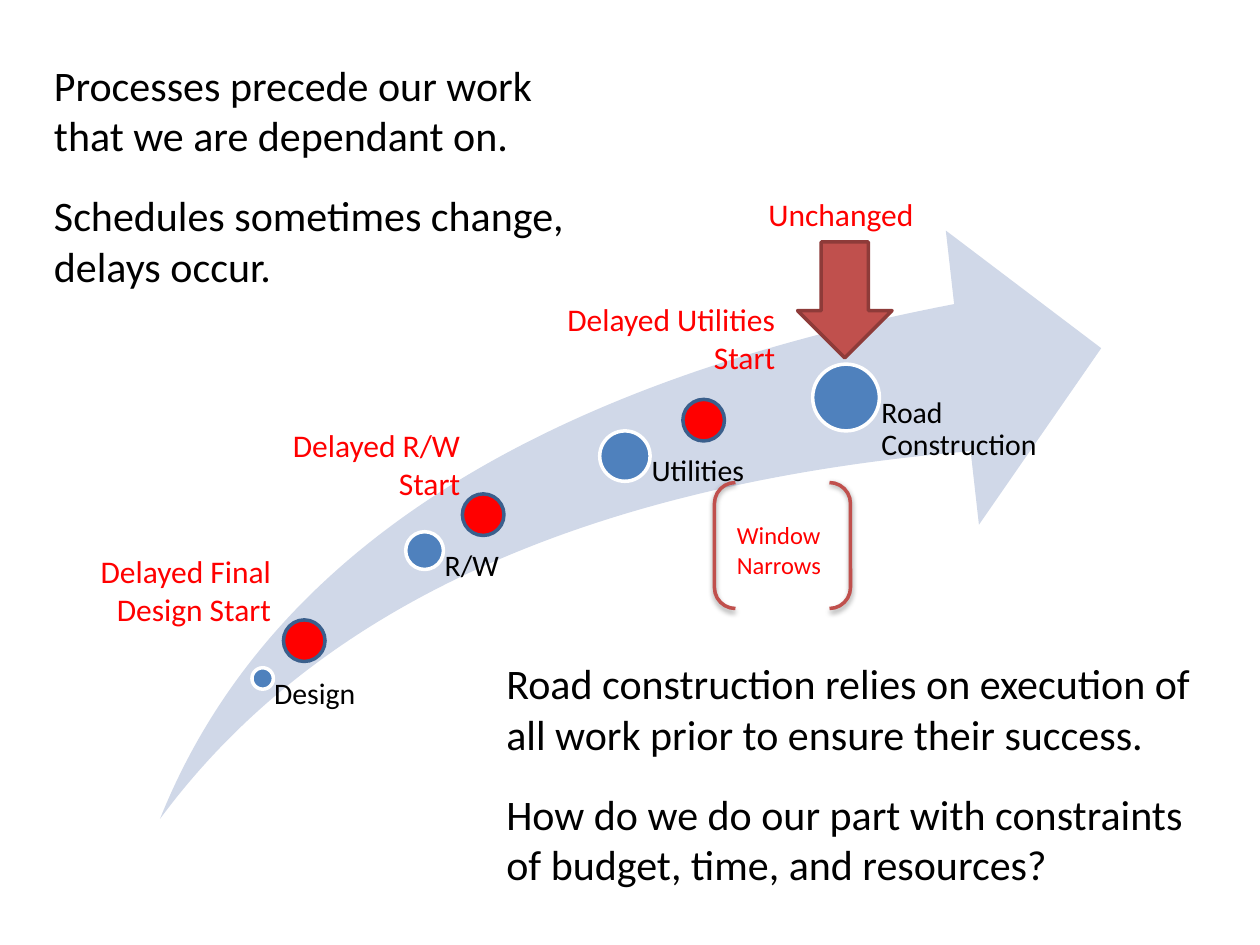
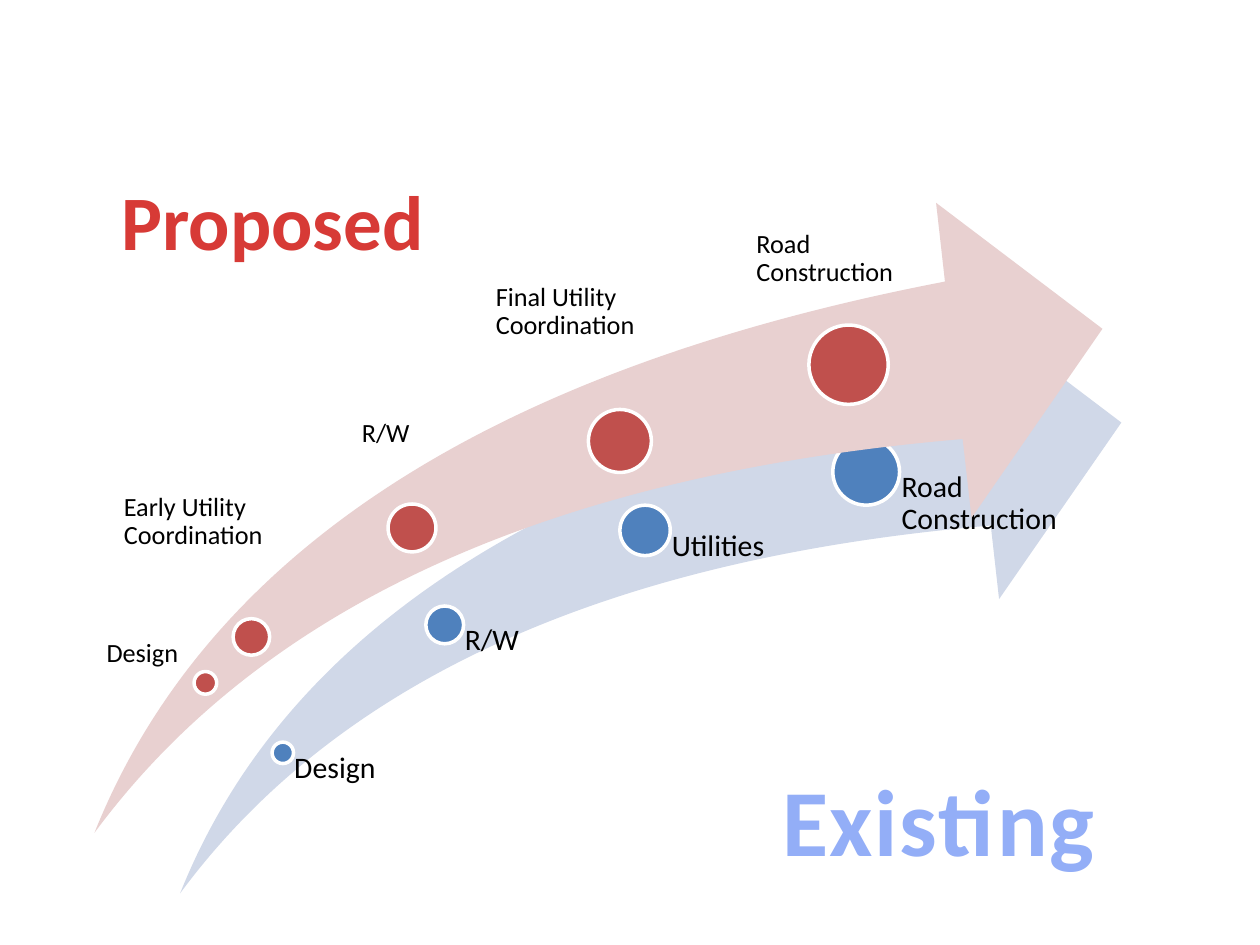
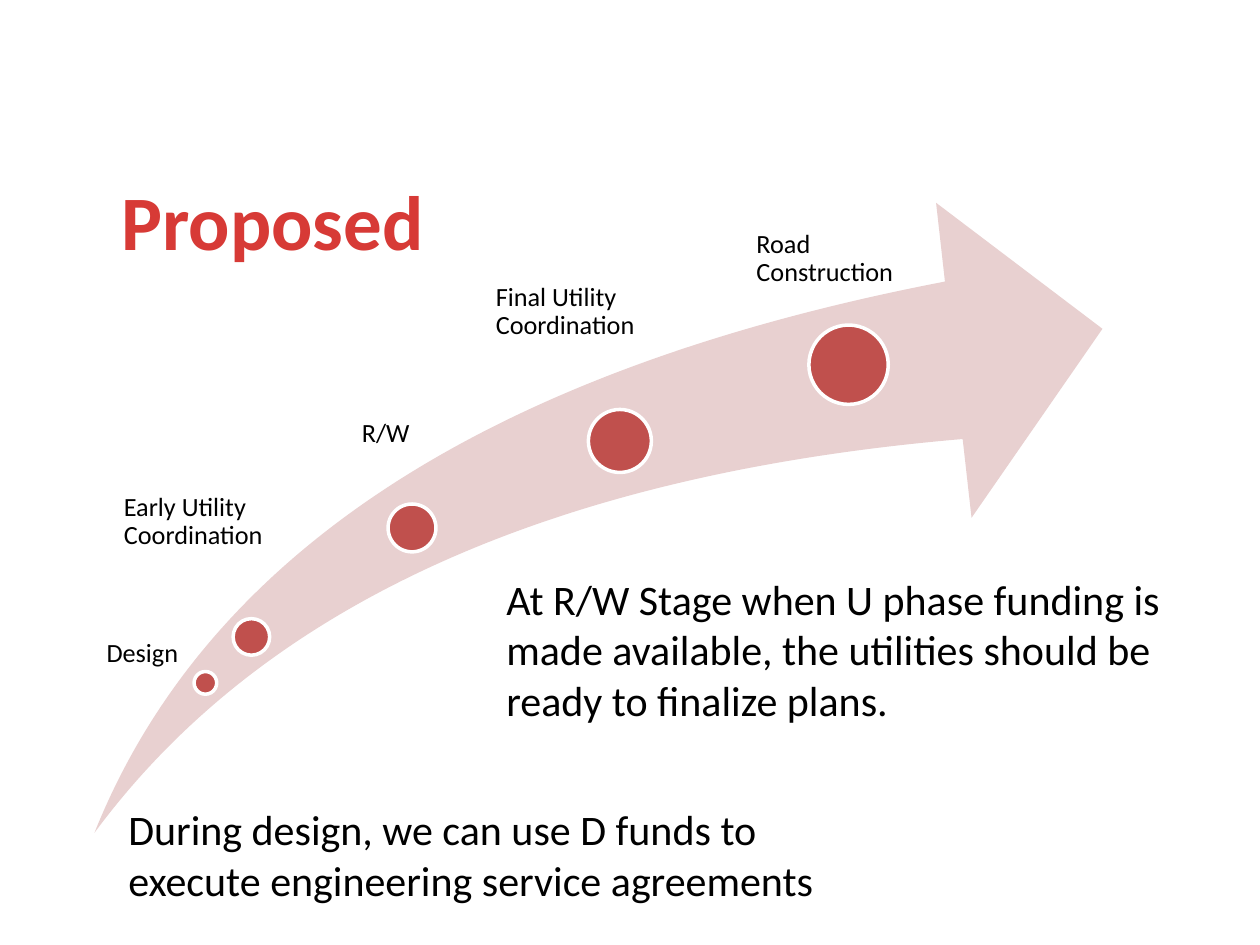
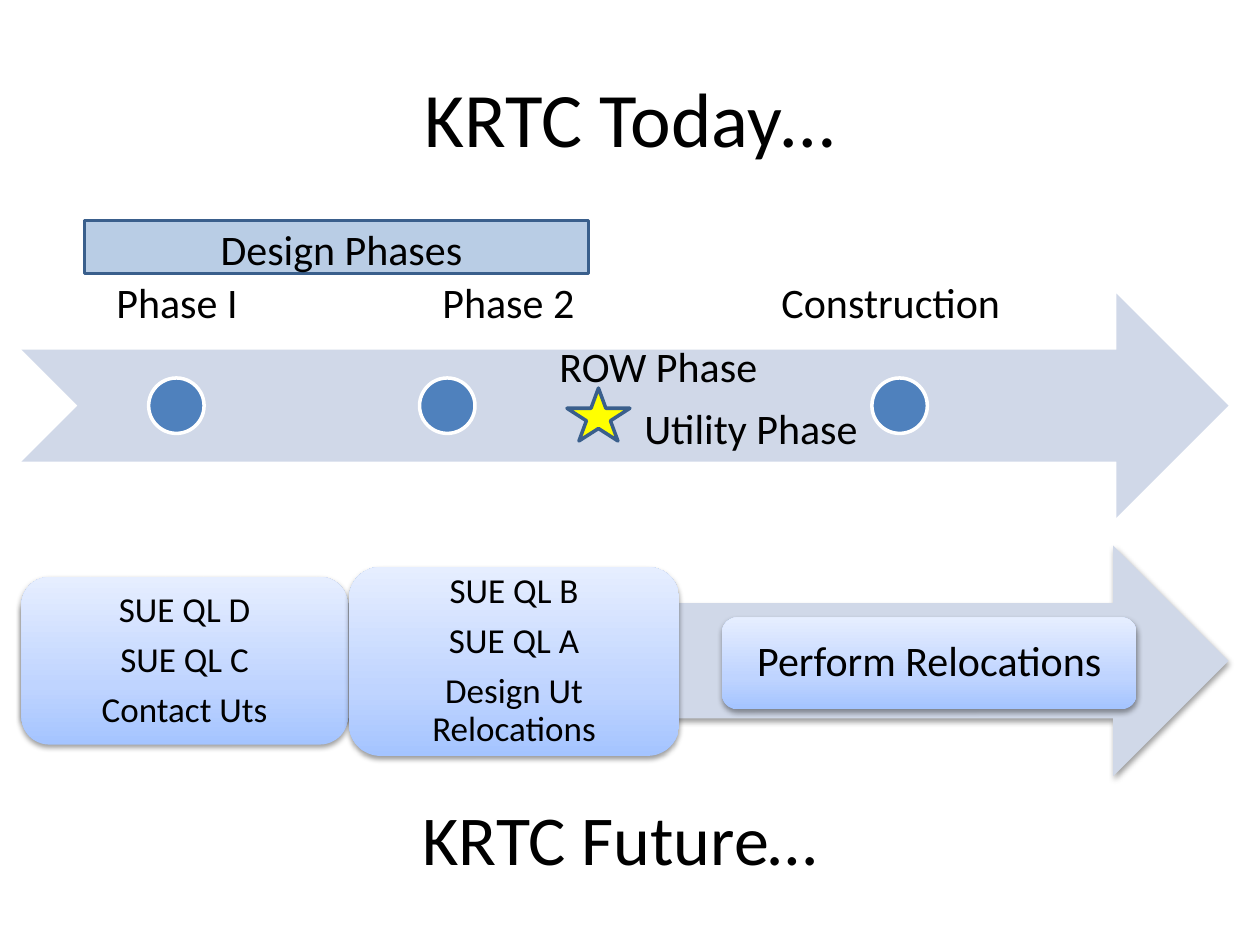
import pptx
import pptx.dml.color
import pptx.enum.shapes
import pptx.enum.text
import pptx.oxml
import pptx.oxml.ns
import pptx.util

Inches, Pt = pptx.util.Inches, pptx.util.Pt
SHAPE = pptx.enum.shapes.MSO_SHAPE
ALIGN = pptx.enum.text.PP_ALIGN
ANCHOR = pptx.enum.text.MSO_ANCHOR


class Theme:
    font = "Calibri"
    black, white, red, yellow = "000000", "FFFFFF", "FF0000", "FFFF00"
    blue, blue_edge, blue_pale, blue_band = "4F81BD", "3A5F8C", "D0D8E8", "B9CDE5"
    brick, brick_edge, brick_pale = "C0504D", "8E3B39", "E8D0D0"
    proposed, existing = "D73A36", "93AEF7"
    card_stops = ((0, "A4C4FF"), (35, "BFD4FF"), (100, "E6EEFF"))
    title, future, existing_size = 44, 40, 54
    body, card, note, existing_step, proposed_step, small = 24, 20, 18, 17, 15, 14
    edge = 2
    paragraph_gap = 17


# Slide 1: areas are (left, top, width, height)
DELAY_NOTES = [
    ((2.08, 3.33, 1.67, 0.71), "Delayed R/W Start"),
    ((0, 4.33, 2.25, 0.71), "Delayed Final Design Start"),
    ((4.25, 2.33, 2, 0.71), "Delayed Utilities Start"),
]
DELAY_DOTS = [(3.67, 3.92), (2.25, 4.92), (5.42, 3.17)]
DELAY_DOT_SIZE = 0.33
DELAY_TEXTS = [
    ((3.92, 5.17, 5.75, 1.95),
     ["Road construction relies on execution of all work prior to ensure their success.",
      "How do we do our part with constraints of budget, time, and resources?"]),
    ((0.33, 0.42, 4.25, 1.95),
     ["Processes precede our work that we are dependant on.",
      "Schedules sometimes change, delays occur."]),
]

# Existing process: name, dot offset from the arrow's corner, dot size, label width
EXISTING_SIZE = (7.47, 4.67)
EXISTING_STEPS = [
    ("Design", 0.73, 3.47, 0.17, 1.28),
    ("R/W", 1.95, 2.39, 0.3, 1.57),
    ("Utilities", 3.49, 1.59, 0.4, 1.57),
    ("Road Construction", 5.18, 1.06, 0.53, 1.57),
]

# Proposed process: name, dot left, top and size, label area
PROPOSED_AREA = (0.75, 1.61, 8, 5)
PROPOSED_STEPS = [
    ("Design", 1.54, 5.33, 0.18, (0.75, 5.08, 1.05, 1.19)),
    ("Early Utility Coordination", 1.85, 4.91, 0.29, (0.83, 3.92, 1.33, 2.1)),
    ("R/W", 3.08, 4, 0.38, (2.67, 3.33, 1.54, 2.81)),
    ("Final Utility Coordination", 4.67, 3.25, 0.5, (3.67, 2.25, 1.6, 3.35)),
    ("Road Construction", 6.42, 2.58, 0.63, (5.67, 1.83, 1.6, 3.68)),
]
LABEL_INDENT = 0.53  # share of the dot size that a step label is moved right

FUNDING_TEXTS = [
    ((3.92, 4.5, 6.08, 1.31),
     "At R/W Stage when U phase funding is made available, "
     "the utilities should be ready to finalize plans."),
    ((0.92, 6.33, 5.83, 0.91),
     "During design, we can use D funds to execute engineering service agreements"),
]

# Slide 4
PHASE_LABELS = [
    ((0.17, 1, 2.47, 1.78), "Phase I"),
    ((2.8, 1, 2.47, 1.78), "Phase 2"),
    ((5.35, 1, 3.44, 1.78), "Construction"),
    ((3.81, 2.67, 2.83, 0.62), "ROW Phase"),
    ((4.67, 2.92, 2.58, 0.86), "Utility Phase"),
    ((1.25, 1.5, 2.92, 0.86), "Design Phases"),
]
PHASE_DOTS_LEFT, PHASE_DOTS_TOP, PHASE_DOT_SIZE = (1.18, 3.33, 6.92), 3, 0.44
FUTURE_CARDS = [
    ((0.17, 4.58, 2.59, 1.33), ["SUE QL D", "SUE QL C", "Contact Uts"], Theme.card, 0.08),
    ((2.77, 4.5, 2.62, 1.5), ["SUE QL B", "SUE QL A", "Design Ut Relocations"], Theme.card, 0.08),
    ((5.73, 4.9, 3.29, 0.73), ["Perform Relocations"], Theme.body, 0.1),
]


def rgb(color):
    return pptx.dml.color.RGBColor.from_string(color)


def xml(markup):
    """Parse one drawing element, given without its namespace declaration."""
    tag, rest = markup.split(" ", 1)
    return pptx.oxml.parse_xml(f"{tag} {pptx.oxml.ns.nsdecls('a')} {rest}")


def add_figure(shapes, kind, area, fill=None, edge=None):
    figure = shapes.add_shape(kind, *map(Inches, area))
    figure.shadow.inherit = False
    if fill:
        figure.fill.solid()
        figure.fill.fore_color.rgb = rgb(fill)
    else:
        figure.fill.background()
    if edge:
        figure.line.color.rgb = rgb(edge)
        figure.line.width = Pt(Theme.edge)
    else:
        figure.line.fill.background()
    return figure


def add_dot(shapes, left, top, size, fill):
    add_figure(shapes, SHAPE.OVAL, (left, top, size, size), fill, Theme.white)


def drop_shadow(figure):
    effects = figure._element.spPr.find(pptx.oxml.ns.qn("a:effectLst"))
    effects.append(xml(
        '<a:outerShdw blurRad="40000" dist="20000" dir="5400000" rotWithShape="0">'
        '<a:srgbClr val="000000"><a:alpha val="38000"/></a:srgbClr></a:outerShdw>'))


def fill_with_gradient(figure, stops):
    """Replace the fill by a gradient that runs from bottom to top."""
    figure.fill.gradient()
    gradient = figure._element.spPr.find(pptx.oxml.ns.qn("a:gradFill"))
    marks = "".join(f'<a:gs pos="{share * 1000}"><a:srgbClr val="{color}"/></a:gs>'
                    for share, color in stops)
    gradient.getparent().replace(gradient, xml(
        f'<a:gradFill rotWithShape="1"><a:gsLst>{marks}</a:gsLst>'
        '<a:lin ang="16200000" scaled="0"/></a:gradFill>'))


def write(box, lines, size, color=Theme.black, align=ALIGN.LEFT, anchor=ANCHOR.TOP,
          insets=(0.1, 0.05, 0.1, 0.05), tight=False, bold=False, gap=0, wrap=True):
    """Fill a box with paragraphs; tight sets the close line pitch of diagram labels."""
    frame = box.text_frame
    frame.word_wrap = wrap
    frame.vertical_anchor = anchor
    (frame.margin_left, frame.margin_top,
     frame.margin_right, frame.margin_bottom) = map(Inches, insets)
    for index, line in enumerate(lines):
        para = frame.add_paragraph() if index else frame.paragraphs[0]
        para.text = line
        para.alignment = align
        para.font.name = Theme.font
        para.font.size = Pt(size)
        para.font.bold = bold
        para.font.color.rgb = rgb(color)
        if tight:
            para.line_spacing = 0.9
            para.space_after = Pt(0.35 * size)
        if index and gap:
            para.space_before = Pt(gap)


def add_text(shapes, area, lines, size, **style):
    box = shapes.add_textbox(*map(Inches, area))
    write(box, lines, size, **style)
    return box


def add_swoosh(shapes, area, fill):
    swoosh = add_figure(shapes, SHAPE.SWOOSH_ARROW, area, fill)
    swoosh.adjustments[0] = swoosh.adjustments[1] = 0.25


def add_step_label(shapes, area, name, size, dot_size):
    add_text(shapes, area, [name], size, tight=True,
             insets=(LABEL_INDENT * dot_size, 0, 0, 0))


def add_existing_process(page, left, top):
    shapes = page.shapes.add_group_shape().shapes
    width, height = EXISTING_SIZE
    add_swoosh(shapes, (left, top, width, height), Theme.blue_pale)
    for name, across, down, size, label_width in EXISTING_STEPS:
        add_dot(shapes, left + across, top + down, size, Theme.blue)
        middle = down + size / 2
        area = (left + across + size / 2, top + middle, label_width, height - middle)
        add_step_label(shapes, area, name, Theme.existing_step, size)


def add_proposed_process(page):
    shapes = page.shapes.add_group_shape().shapes
    add_swoosh(shapes, PROPOSED_AREA, Theme.brick_pale)
    for name, left, top, size, label_area in PROPOSED_STEPS:
        add_dot(shapes, left, top, size, Theme.brick)
        add_step_label(shapes, label_area, name, Theme.proposed_step, size)
    add_heading(page, (0.67, 1.33, 2.99, 0.84), "Proposed", Theme.title, Theme.proposed)


def add_heading(page, area, text, size, color):
    return add_text(page.shapes, area, [text], size, color=color, align=ALIGN.CENTER,
                    bold=True, wrap=False)


def build_delays(page):
    shapes = page.shapes
    add_existing_process(page, 1.27, 1.83)
    for area, lines in DELAY_TEXTS:
        add_text(shapes, area, lines, Theme.body, gap=Theme.paragraph_gap)
    for left, top in DELAY_DOTS:
        add_figure(shapes, SHAPE.FLOWCHART_CONNECTOR,
                   (left, top, DELAY_DOT_SIZE, DELAY_DOT_SIZE), Theme.red, Theme.blue_edge)
    for area, text in DELAY_NOTES:
        add_text(shapes, area, [text], Theme.note, color=Theme.red, align=ALIGN.RIGHT)
    add_figure(shapes, SHAPE.DOWN_ARROW, (6.33, 1.92, 0.75, 0.92),
               Theme.brick, Theme.brick_edge)
    add_text(shapes, (6, 1.5, 1.75, 0.4), ["Unchanged"], Theme.note, color=Theme.red)
    brackets = add_figure(shapes, SHAPE.DOUBLE_BRACKET, (5.67, 3.83, 1.08, 1),
                          edge=Theme.brick)
    drop_shadow(brackets)
    add_text(shapes, (5.75, 4.08, 1, 0.57), ["Window Narrows"], Theme.small, color=Theme.red)


def build_comparison(page):
    add_existing_process(page, 1.43, 2.42)
    add_proposed_process(page)
    heading = add_heading(page, (5.83, 6, 3.24, 1.01), "Existing",
                          Theme.existing_size, Theme.existing)
    span = heading.text_frame.paragraphs[0].runs[0]
    span._r.get_or_add_rPr().set("spc", "100")


def build_funding(page):
    add_proposed_process(page)
    for area, text in FUNDING_TEXTS:
        add_text(page.shapes, area, [text], Theme.body)


def build_today_and_future(page):
    shapes = page.shapes
    add_text(shapes, (0.5, 0.3, 9, 1.25), ["KRTC Today…"], Theme.title,
             align=ALIGN.CENTER, anchor=ANCHOR.MIDDLE)
    add_figure(shapes, SHAPE.NOTCHED_RIGHT_ARROW, (0.17, 2.33, 9.58, 1.78), Theme.blue_pale)
    for left in PHASE_DOTS_LEFT:
        add_dot(shapes, left, PHASE_DOTS_TOP, PHASE_DOT_SIZE, Theme.blue)
    add_figure(shapes, SHAPE.RECTANGLE, (0.67, 1.75, 4, 0.42),
               Theme.blue_band, Theme.blue_edge)
    for area, text in PHASE_LABELS:
        add_text(shapes, area, [text], Theme.body, align=ALIGN.CENTER,
                 anchor=ANCHOR.BOTTOM, insets=[0.19] * 4, tight=True)

    add_text(shapes, (0.67, 6, 8.5, 1.08), ["KRTC Future…"], Theme.future,
             align=ALIGN.CENTER, anchor=ANCHOR.BOTTOM, insets=(0.1, 0.05, 0.1, 0.1))
    arrow = add_figure(shapes, SHAPE.RIGHT_ARROW, (0.17, 4.33, 9.58, 1.83), Theme.blue_pale)
    drop_shadow(arrow)
    for area, lines, size, inset in FUTURE_CARDS:
        card = add_figure(shapes, SHAPE.ROUNDED_RECTANGLE, area)
        fill_with_gradient(card, Theme.card_stops)
        drop_shadow(card)
        write(card, lines, size, align=ALIGN.CENTER, anchor=ANCHOR.MIDDLE,
              insets=[inset] * 4, tight=True)
    add_figure(shapes, SHAPE.STAR_5_POINT, (4.5, 3.08, 0.5, 0.42),
               Theme.yellow, Theme.blue_edge)


def main():
    deck = pptx.Presentation()
    deck.slide_width, deck.slide_height = Inches(10), Inches(7.5)
    blank = deck.slide_layouts[6]
    for build in (build_delays, build_comparison, build_funding, build_today_and_future):
        build(deck.slides.add_slide(blank))
    deck.save("out.pptx")


if __name__ == "__main__":
    main()
